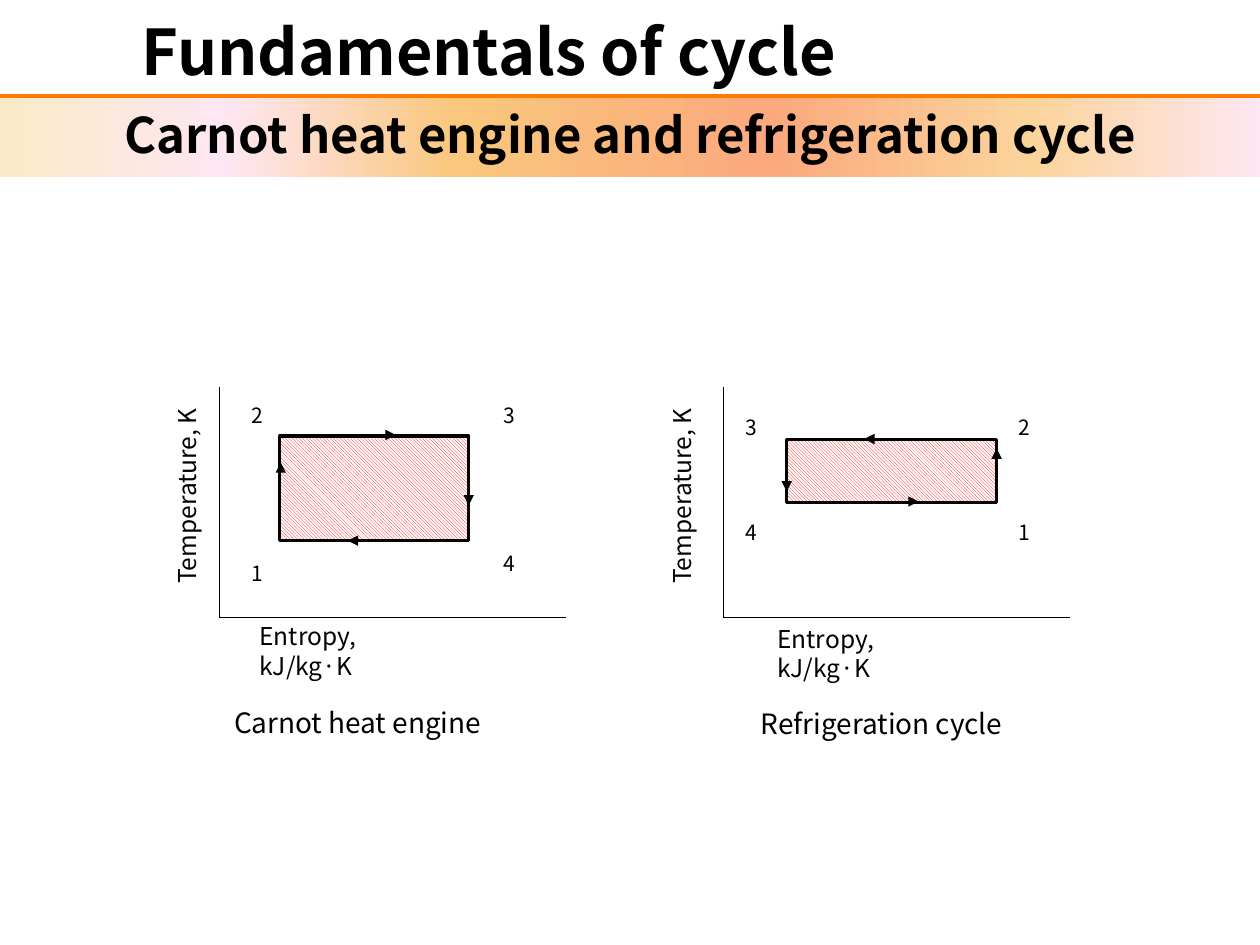
from dataclasses import dataclass

from lxml import etree
from pptx import Presentation
from pptx import util as u
from pptx.dml.color import RGBColor
from pptx.enum import dml, shapes, text
from pptx.oxml import parse_xml
from pptx.oxml.ns import nsdecls, qn

FONT = "Noto Sans CJK KR"
BLACK = RGBColor(0x00, 0x00, 0x00)
WHITE = RGBColor(0xFF, 0xFF, 0xFF)
RED = RGBColor(0xFF, 0x00, 0x00)
ORANGE = RGBColor(0xFF, 0x7B, 0x00)
BAND_STOPS = [
    (0, RGBColor(0xFB, 0xEA, 0xC7)),
    (18, RGBColor(0xFE, 0xE7, 0xF2)),
    (36, RGBColor(0xFA, 0xC7, 0x7D)),
    (61, RGBColor(0xFB, 0xA9, 0x7D)),
    (82, RGBColor(0xFB, 0xD4, 0x9C)),
    (100, RGBColor(0xFE, 0xE7, 0xF2)),
]
AXIS_TOP, AXIS_BOTTOM, AXIS_LENGTH = 7.8, 12.45, 6.98
Box = tuple[float, float, float, float]  # left, top, width, height in cm


@dataclass
class Label:
    words: str
    box: Box
    size: int
    upward: bool = False


@dataclass
class Diagram:
    axis_left: float
    cycle: Box
    pattern: dml.MSO_PATTERN
    labels: list[Label]
    states: dict[str, tuple[float, float]]  # left, top of each number
    arrows: list[Box]  # start x, start y, end x, end y


def add_run(para, words: str, size: int, bold: bool = False) -> None:
    span = para.add_run()
    span.text = words
    span.font.name = FONT
    span.font.size = u.Pt(size)
    span.font.bold = bold
    span.font.color.rgb = BLACK


def add_line(parent, ends: Box, color: RGBColor = BLACK, width: float = 0.75,
             arrow: bool = False) -> None:
    line = parent.add_connector(shapes.MSO_CONNECTOR.STRAIGHT, *map(u.Cm, ends))
    line.line.color.rgb = color
    line.line.width = u.Pt(width)
    if arrow:
        etree.SubElement(line.line._get_or_add_ln(), qn("a:tailEnd"), type="triangle")
    etree.SubElement(line._element.spPr, qn("a:effectLst"))


def add_label(parent, label: Label) -> None:
    box = parent.add_textbox(*map(u.Cm, label.box))
    box.text_frame.word_wrap = True
    add_run(box.text_frame.paragraphs[0], label.words, label.size)
    if label.upward:
        box.rotation = 180
        box.text_frame._txBody.bodyPr.set("vert", "eaVert")


def add_rectangle(parent, place: Box):
    rectangle = parent.add_shape(shapes.MSO_SHAPE.RECTANGLE, *map(u.Cm, place))
    rectangle.shadow.inherit = False
    return rectangle


def add_diagram(page, diagram: Diagram) -> None:
    parent = page.shapes.add_group_shape().shapes
    left = diagram.axis_left
    add_line(parent, (left, AXIS_TOP, left, AXIS_BOTTOM))
    add_line(parent, (left, AXIS_BOTTOM, left + AXIS_LENGTH, AXIS_BOTTOM))

    cycle = add_rectangle(parent, diagram.cycle)
    cycle.fill.patterned()
    cycle.fill.pattern = diagram.pattern
    cycle.fill.fore_color.rgb = RED
    cycle.fill.back_color.rgb = WHITE
    cycle.line.color.rgb = BLACK
    cycle.line.width = u.Pt(1.75)

    for label in diagram.labels:
        add_label(parent, label)
    for number, (x, y) in diagram.states.items():
        add_label(parent, Label(number, (x, y, 1.07, 0.76), 12))
    for ends in diagram.arrows:
        add_line(parent, ends, arrow=True)


def add_band(page, words: str) -> None:
    band = add_rectangle(page.shapes, (0, 1.98, 25.4, 1.6))
    band.line.fill.background()
    stops = "".join(
        f'<a:gs pos="{position * 1000}"><a:srgbClr val="{color}"/></a:gs>'
        for position, color in BAND_STOPS)
    gradient = parse_xml(f'<a:gradFill {nsdecls("a")} rotWithShape="1"><a:gsLst>{stops}'
                         '</a:gsLst><a:lin ang="0" scaled="0"/></a:gradFill>')
    band._element.spPr.find(qn("a:prstGeom")).addnext(gradient)
    frame = band.text_frame
    frame.word_wrap = True
    frame.vertical_anchor = text.MSO_ANCHOR.TOP
    para = frame.paragraphs[0]
    para.alignment = text.PP_ALIGN.CENTER
    add_run(para, words, 28, bold=True)


DIAGRAMS = [
    Diagram(
        4.42, (5.64, 8.79, 3.81, 2.11), dml.MSO_PATTERN.DARK_DOWNWARD_DIAGONAL,
        [Label("Temperature, K", (3.35, 7.37, 1.09, 4.65), 14, upward=True),
         Label("Entropy, kJ/kg·K", (4.98, 12.4, 4.34, 0.86), 14),
         Label("Carnot heat engine", (4.47, 14.1, 6.63, 0.94), 16)],
        {"1": (4.83, 11.18), "2": (4.83, 8), "3": (9.91, 8), "4": (9.91, 10.97)},
        [(5.66, 10.16, 5.66, 9.32), (7.9, 10.9, 7.01, 10.9),
         (9.45, 9.35, 9.45, 10.19), (7.09, 8.77, 7.98, 8.77)]),
    Diagram(
        14.58, (15.85, 8.86, 4.24, 1.27), dml.MSO_PATTERN.LIGHT_DOWNWARD_DIAGONAL,
        [Label("Temperature, K", (13.31, 7.37, 1.09, 4.65), 14, upward=True),
         Label("Entropy, kJ/kg·K", (15.42, 12.45, 4.42, 0.86), 14),
         Label("Refrigeration cycle", (15.09, 14.12, 5.99, 0.94), 16)],
        {"1": (20.29, 10.34), "2": (20.29, 8.23), "3": (14.78, 8.23), "4": (14.78, 10.34)},
        [(17.63, 10.11, 18.52, 10.11), (20.09, 9.88, 20.09, 9.04),
         (18.29, 8.85, 17.42, 8.85), (15.86, 9.07, 15.86, 9.91)]),
]


def main() -> None:
    deck = Presentation()
    deck.slide_width, deck.slide_height = u.Cm(25.4), u.Cm(19.05)
    page = deck.slides.add_slide(deck.slide_layouts[5])

    # Title
    title = page.shapes.title
    title.left, title.top, title.width, title.height = map(u.Cm, (0, 0, 19.71, 2.01))
    title.text_frame.vertical_anchor = text.MSO_ANCHOR.MIDDLE
    para = title.text_frame.paragraphs[0]
    para.alignment = text.PP_ALIGN.CENTER
    add_run(para, "Fundamentals of cycle", 36, bold=True)

    # Rule and subtitle band
    add_line(page.shapes, (0, 1.93, 25.4, 1.93), ORANGE, 2)
    add_band(page, "Carnot heat engine and refrigeration cycle")

    # Temperature-entropy diagrams
    for diagram in DIAGRAMS:
        add_diagram(page, diagram)

    deck.save("out.pptx")


if __name__ == "__main__":
    main()
